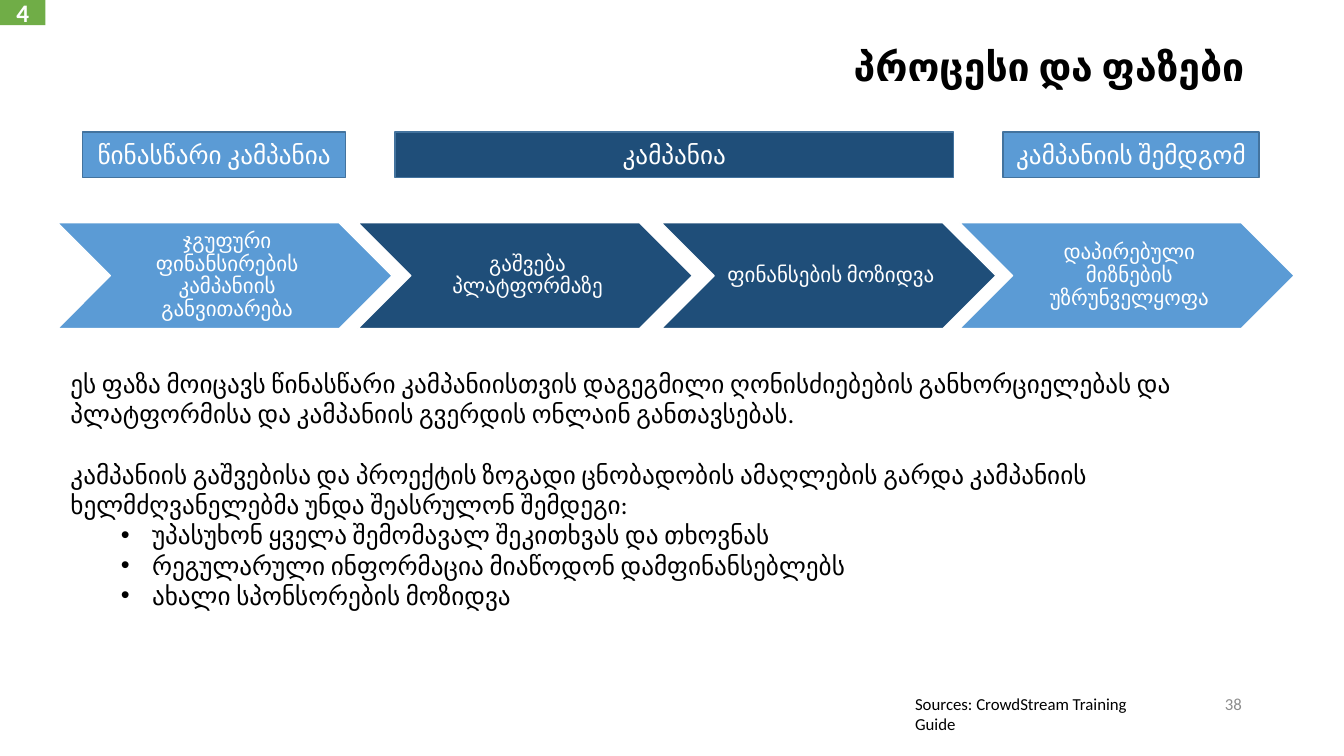
import pptx
import pptx.dml.color
import pptx.enum.shapes
import pptx.enum.text
import pptx.oxml
import pptx.util

SHAPES = pptx.enum.shapes.MSO_SHAPE
ALIGN = pptx.enum.text.PP_ALIGN
ANCHOR = pptx.enum.text.MSO_ANCHOR

LIGHT_BLUE, DARK_BLUE, BORDER = "5B9BD5", "1F4E79", "43739E"
GREEN, GREY, WHITE, BLACK = "70AD47", "8C8C8C", "FFFFFF", "000000"


def colour(hex_value):
    return pptx.dml.color.RGBColor.from_string(hex_value)


class SlideBuilder:
    """Places elements on a grid of 40 columns and 30 rows."""

    COLUMNS, ROWS = 40, 30
    FONT = "Calibri"

    def __init__(self, deck):
        self.column = deck.slide_width / self.COLUMNS
        self.row = deck.slide_height / self.ROWS
        self.slide = deck.slides.add_slide(deck.slide_layouts[6])

    def place(self, left, top, width, height):
        return (round(left * self.column), round(top * self.row),
                round(width * self.column), round(height * self.row))

    def shape(self, kind, box, fill, border=None):
        item = self.slide.shapes.add_shape(kind, *self.place(*box))
        item.shadow.inherit = False
        item.fill.solid()
        item.fill.fore_color.rgb = colour(fill)
        if border:
            item.line.color.rgb = colour(border)
            item.line.width = pptx.util.Pt(1)
        else:
            item.line.fill.background()
        return item

    def text_box(self, box, paragraphs, size, **style):
        item = self.slide.shapes.add_textbox(*self.place(*box))
        self.fill_text(item.text_frame, paragraphs, size, **style)
        return item.text_frame

    def banner(self, box, label, fill, border=None, bold=False):
        item = self.shape(SHAPES.RECTANGLE, box, fill, border)
        self.fill_text(item.text_frame, [label], 18, ink=WHITE, bold=bold,
                       align=ALIGN.CENTER, anchor=ANCHOR.MIDDLE)

    def chevron(self, left, label, fill):
        self.shape(SHAPES.CHEVRON, (left, 8.84, 9.96, 4.2), fill, WHITE)
        frame = self.text_box((left + 1.57, 8.84, 6.81, 4.2), [label], 15, ink=WHITE,
                              align=ALIGN.CENTER, anchor=ANCHOR.MIDDLE, spacing=0.9)
        insets = {"margin_left": 0.07, "margin_top": 0.02,
                  "margin_right": 0.02, "margin_bottom": 0.02}
        for side, inset in insets.items():
            setattr(frame, side, pptx.util.Inches(inset))

    def fill_text(self, frame, paragraphs, size, ink=BLACK, bold=False,
                  align=ALIGN.LEFT, anchor=ANCHOR.TOP, spacing=None):
        frame.word_wrap = True
        frame.vertical_anchor = anchor
        for number, text in enumerate(paragraphs):
            paragraph = frame.paragraphs[0] if number == 0 else frame.add_paragraph()
            layout = {"alignment": align, "line_spacing": spacing}
            for name, value in layout.items():
                setattr(paragraph, name, value)
            run = paragraph.add_run()
            run.text = text
            style = {"name": self.FONT, "size": pptx.util.Pt(size), "bold": bold}
            for name, value in style.items():
                setattr(run.font, name, value)
            run.font.color.rgb = colour(ink)

    def bullet(self, paragraph):
        paragraph.level = 1
        properties = paragraph._p.get_or_add_pPr()
        properties.set("marL", str(pptx.util.Inches(0.81)))
        properties.set("indent", str(pptx.util.Inches(-0.31)))
        for element in ('buFont typeface="Arial"', 'buChar char="•"'):
            properties.append(pptx.oxml.parse_xml(
                f'<a:{element} xmlns:a='
                '"http://schemas.openxmlformats.org/drawingml/2006/main"/>'))


def main():
    deck = pptx.Presentation()
    deck.slide_width = pptx.util.Inches(13.33)
    deck.slide_height = pptx.util.Inches(7.5)
    builder = SlideBuilder(deck)

    # Process steps
    steps = [
        (1.71, "ჯგუფური ფინანსირების კამპანიის განვითარება", LIGHT_BLUE),
        (10.65, "გაშვება პლატფორმაზე", DARK_BLUE),
        (19.68, "ფინანსების მოზიდვა", DARK_BLUE),
        (28.56, "დაპირებული მიზნების უზრუნველყოფა", LIGHT_BLUE),
    ]
    for left, label, fill in steps:
        builder.chevron(left, label, fill)

    # Title
    builder.text_box((2.82, 1.68, 34.5, 2.28), ["პროცესი და ფაზები"], 28,
                     bold=True, align=ALIGN.RIGHT, spacing=0.9)

    # Phases above the steps
    phases = [
        (2.46, 7.83, "წინასწარი კამპანია", LIGHT_BLUE),
        (11.76, 16.62, "კამპანია", DARK_BLUE),
        (29.85, 7.62, "კამპანიის შემდგომ", LIGHT_BLUE),
    ]
    for left, width, label, fill in phases:
        builder.banner((left, 5.24, width, 1.8), label, fill, BORDER)

    # Description and tasks
    description = [
        "ეს ფაზა მოიცავს წინასწარი კამპანიისთვის დაგეგმილი ღონისძიებების "
        "განხორციელებას და პლატფორმისა და კამპანიის გვერდის ონლაინ განთავსებას.",
        "კამპანიის გაშვებისა და პროექტის ზოგადი ცნობადობის ამაღლების გარდა "
        "კამპანიის ხელმძღვანელებმა უნდა შეასრულონ შემდეგი:",
    ]
    tasks = [
        "უპასუხონ ყველა შემომავალ შეკითხვას და თხოვნას",
        "რეგულარული ინფორმაცია მიაწოდონ დამფინანსებლებს",
        "ახალი სპონსორების მოზიდვა",
    ]
    body = builder.text_box((1.8, 14.4, 36.54, 10.08), description + tasks, 18)
    body.paragraphs[1].space_before = pptx.util.Pt(22)
    for task in body.paragraphs[len(description):]:
        builder.bullet(task)

    # Section badge, source and page number
    builder.banner((0, 0, 1.35, 1), "4", GREEN, bold=True)
    builder.text_box((26.94, 27.32, 8.1, 2), ["Sources: CrowdStream Training Guide"], 12)
    builder.text_box((28.26, 27.12, 9, 1.6), ["38"], 12, ink=GREY,
                     align=ALIGN.RIGHT, anchor=ANCHOR.MIDDLE)

    deck.save("out.pptx")


if __name__ == "__main__":
    main()
